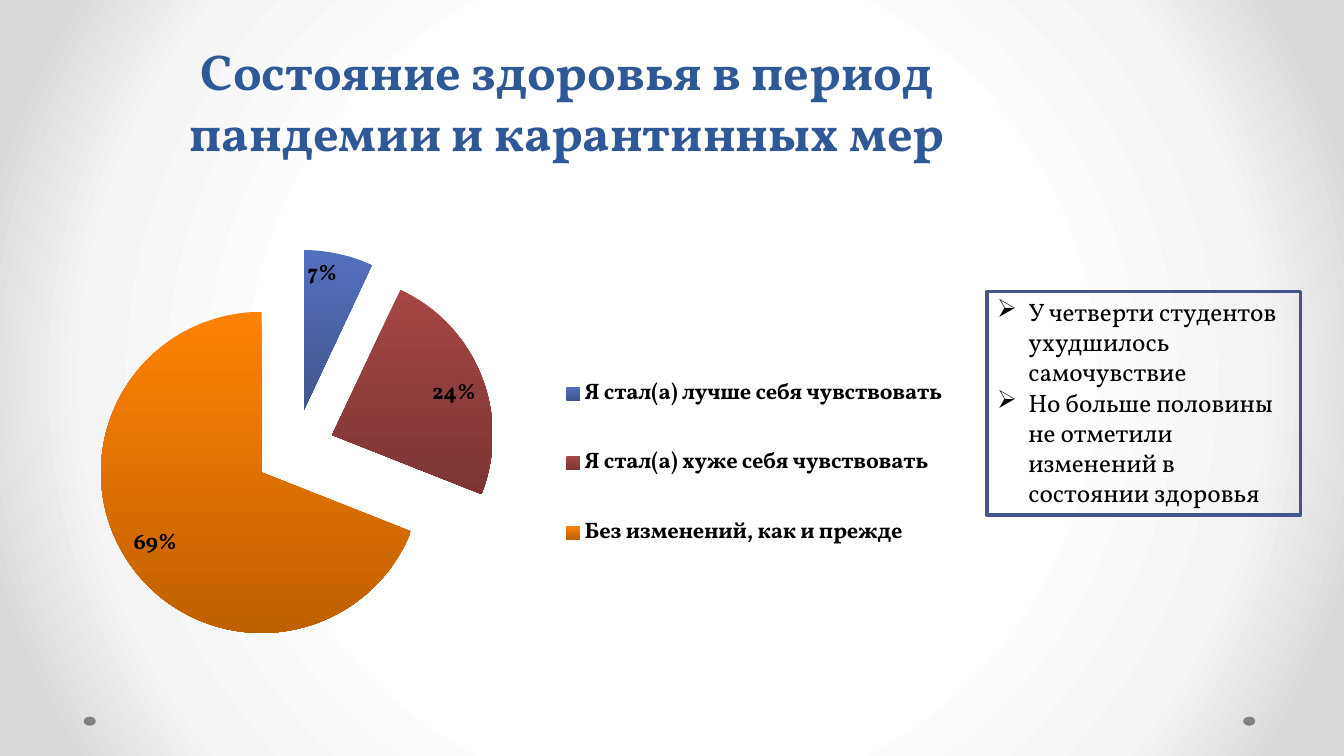
import pptx
import pptx.chart.data
import pptx.dml.color
import pptx.enum.chart
import pptx.enum.shapes
import pptx.enum.text
import pptx.oxml
import pptx.oxml.ns
import pptx.util

Inches = pptx.util.Inches
Pt = pptx.util.Pt
FONT = "Vollkorn"
COLORS = {"title": "2F5897", "text": "000000", "dot": "808080", "frame": "42568D"}
BACKDROP = {50: "FFFFFF", 76: "F4F4F4", 92: "DADADA"}
ANSWERS = [
    ("Я стал(а) лучше себя чувствовать", 7, ("5370BF", "42568D")),
    ("Я стал(а) хуже себя чувствовать", 24, ("A64646", "7C3535")),
    ("Без изменений, как и прежде", 69, ("FF8204", "C06000")),
]
FINDINGS = [
    "У четверти студентов ухудшилось самочувствие",
    "Но больше половины не отметили изменений в состоянии здоровья",
]


def rgb(name):
    """Return the colour for a palette name or a hex string."""
    return pptx.dml.color.RGBColor.from_string(COLORS.get(name, name))


def set_font(font, color, **values):
    """Apply the slide font, a colour and further values."""
    for key, value in {"name": FONT, **values}.items():
        setattr(font, key, value)
    font.color.rgb = rgb(color)


def layout_xml(x, y, w, h, target=""):
    """Return a manual chart layout element in fractions of the chart."""
    sizes = "".join(f'<c:{k} val="{v}"/>' for k, v in zip("xywh", (x, y, w, h)))
    return pptx.oxml.parse_xml(
        f'<c:layout {pptx.oxml.ns.nsdecls("c")}><c:manualLayout>{target}'
        f'<c:xMode val="edge"/><c:yMode val="edge"/>{sizes}</c:manualLayout></c:layout>')


def set_background(s):
    """Fill the background with a radial gradient."""
    s.background.fill.gradient()
    stops = "".join(f'<a:gs pos="{pos * 1000}"><a:srgbClr val="{color}"/></a:gs>'
                    for pos, color in BACKDROP.items())
    grad = pptx.oxml.parse_xml(
        f'<a:gradFill {pptx.oxml.ns.nsdecls("a")} rotWithShape="1"><a:gsLst>{stops}</a:gsLst>'
        '<a:path path="circle"><a:fillToRect l="50000" t="50000" r="50000" b="50000"/></a:path>'
        '</a:gradFill>')
    old = s.background._cSld.find(".//" + pptx.oxml.ns.qn("a:gradFill"))
    old.getparent().replace(old, grad)


def add_dot(s, left):
    """Add a small footer dot."""
    sp = s.shapes.add_shape(pptx.enum.shapes.MSO_SHAPE.OVAL,
                            Inches(left), Inches(7.11), Inches(0.12), Inches(0.09))
    sp.shadow.inherit = False
    sp.fill.solid()
    sp.fill.fore_color.rgb = rgb("dot")
    sp.line.fill.background()


def add_title(s, text):
    """Place and format the title placeholder."""
    sp = s.shapes.title
    sp.left, sp.top, sp.width, sp.height = map(Inches, (0.97, 0.26, 9.31, 1.39))
    tf = sp.text_frame
    tf.text = text
    tf.vertical_anchor = pptx.enum.text.MSO_ANCHOR.BOTTOM
    p = tf.paragraphs[0]
    p.alignment = pptx.enum.text.PP_ALIGN.CENTER
    set_font(p.runs[0].font, "title", size=Pt(36), bold=True)


def add_pie(s):
    """Add the exploded pie with its legend and percent labels."""
    data = pptx.chart.data.CategoryChartData()
    data.categories = [name for name, _, _ in ANSWERS]
    data.add_series("Series 1", [value for _, value, _ in ANSWERS])
    chart = s.shapes.add_chart(pptx.enum.chart.XL_CHART_TYPE.PIE, Inches(0.8), Inches(2),
                               Inches(8.85), Inches(5.24), data).chart
    chart.has_title = False
    set_font(chart.font, "text", size=Pt(10))
    chart.has_legend = True
    legend = chart.legend
    legend.position = pptx.enum.chart.XL_LEGEND_POSITION.TOP
    legend.include_in_layout = False
    set_font(legend.font, "text", size=Pt(16), bold=True)
    legend._element.find(pptx.oxml.ns.qn("c:legendPos")).addnext(
        layout_xml(0.53, 0.26, 0.45, 0.47))

    area = chart._chartSpace.chart.plotArea
    for old in area.findall(pptx.oxml.ns.qn("c:layout")):
        area.remove(old)
    area.insert(0, layout_xml(0.01, 0.09, 0.46, 0.76, '<c:layoutTarget val="inner"/>'))

    plot = chart.plots[0]
    plot.vary_by_categories = True
    series = plot.series[0]
    for i, (_, _, shades) in enumerate(ANSWERS):
        fill = series.points[i].format.fill
        fill.gradient()
        fill.gradient_angle = 270
        for stop, shade in zip(fill.gradient_stops, shades):
            stop.color.rgb = rgb(shade)
            stop.position = shades.index(shade)
    explosion = pptx.oxml.parse_xml(
        f'<c:explosion {pptx.oxml.ns.nsdecls("c")} val="25"/>')
    series._element.find(pptx.oxml.ns.qn("c:dPt")).addprevious(explosion)
    labels = series.data_labels
    for key, value in {"show_percentage": True, "show_value": False,
                       "number_format": "0%", "number_format_is_linked": False,
                       "position": pptx.enum.chart.XL_LABEL_POSITION.INSIDE_END}.items():
        setattr(labels, key, value)
    set_font(labels.font, "text", size=Pt(16), bold=True)


def add_findings(s):
    """Add the framed box with arrow bullets."""
    sp = s.shapes.add_textbox(Inches(9.79), Inches(2.89), Inches(3.11), Inches(2.22))
    sp.line.color.rgb = rgb("frame")
    sp.line.width = Pt(2.5)
    tf = sp.text_frame
    tf.word_wrap = True
    for i, text in enumerate(FINDINGS):
        p = tf.add_paragraph() if i else tf.paragraphs[0]
        r = p.add_run()
        r.text = text
        set_font(r.font, "text", size=Pt(18))
        props = p._p.get_or_add_pPr()
        props.set("marL", str(Inches(0.31)))
        props.set("indent", str(-Inches(0.31)))
        props.append(pptx.oxml.parse_xml(
            f'<a:buChar {pptx.oxml.ns.nsdecls("a")} char="➢"/>'))


def main():
    """Build and save the slide."""
    prs = pptx.Presentation()
    prs.slide_width, prs.slide_height = Inches(13.33), Inches(7.5)
    s = prs.slides.add_slide(prs.slide_layouts[5])
    set_background(s)
    for left in (12.33, 0.83):
        add_dot(s, left)
    add_title(s, "Состояние здоровья в период пандемии и карантинных мер")
    add_pie(s)
    add_findings(s)
    prs.save("out.pptx")


if __name__ == "__main__":
    main()
